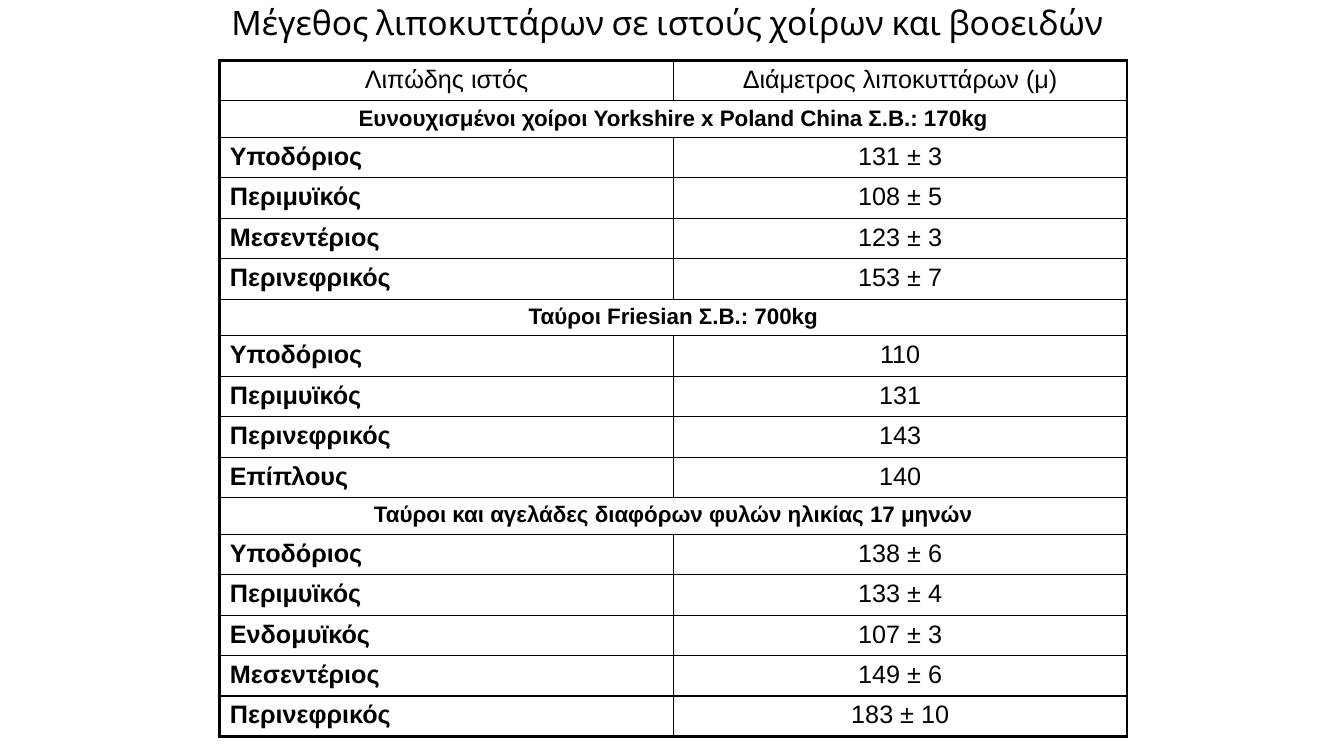
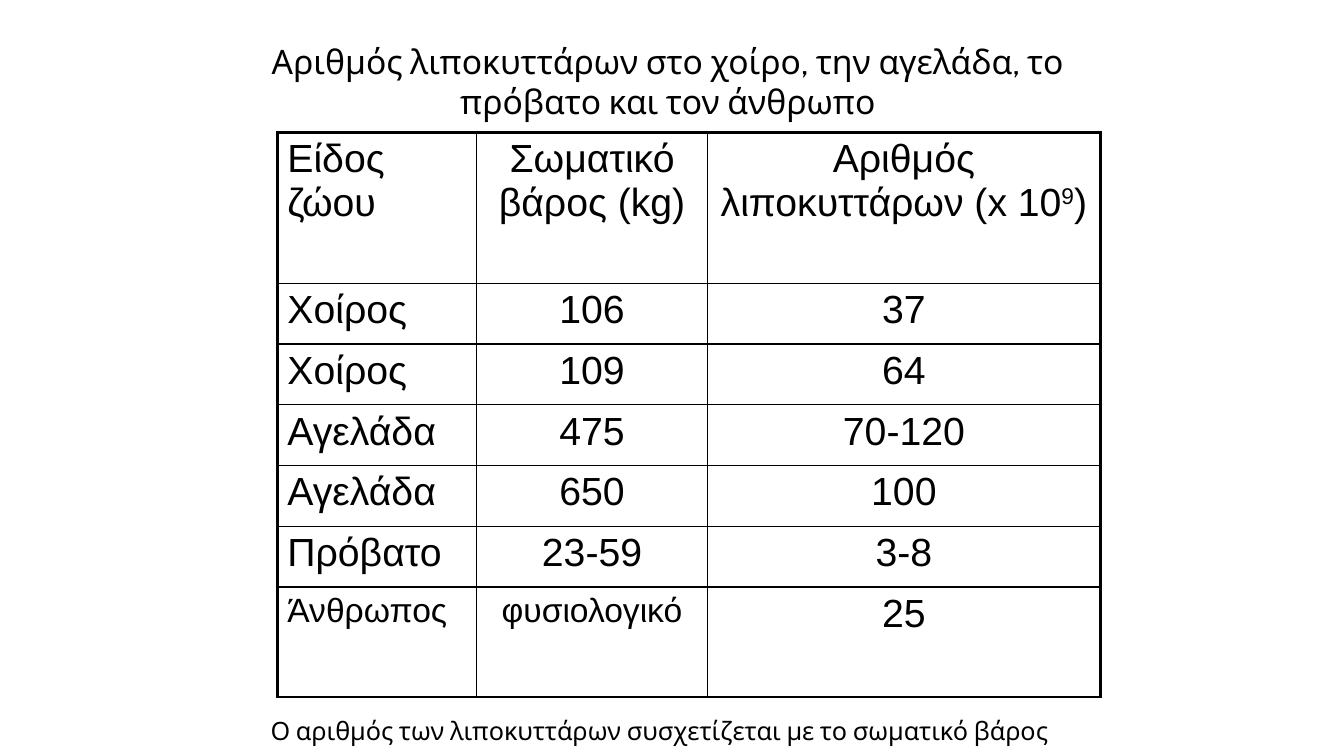
from lxml.etree import SubElement
from pptx import Presentation
from pptx.dml.color import RGBColor
from pptx.enum.text import PP_ALIGN as Align
from pptx.oxml.ns import qn
from pptx.util import Cm, Pt

BLACK = RGBColor(0x00, 0x00, 0x00)
TITLE_FONT, TABLE_FONT = "Cabin", "Arial"
THIN, THICK = Pt(1), Pt(2.25)


def write(tf, text, font=TABLE_FONT, size=18, bold=False, align=Align.CENTER):
    """Fill a text frame; a part between two carets is superscript."""
    tf.word_wrap = True
    p = tf.paragraphs[0]
    p.alignment = align
    for i, part in enumerate(text.split("^")):
        r = p.add_run()
        r.text = part
        r.font.name, r.font.size, r.font.bold = font, Pt(size), bold
        r.font.color.rgb = BLACK
        if i % 2:
            r._r.get_or_add_rPr().set("baseline", "30000")


def set_borders(cell, **widths):
    tc_pr = cell._tc.get_or_add_tcPr()
    for side in "LRTB":
        ln = SubElement(tc_pr, qn(f"a:ln{side}"), w=str(widths[side]))
        fill = SubElement(ln, qn("a:solidFill"))
        SubElement(fill, qn("a:srgbClr"), val=str(BLACK))


class Deck:
    def __init__(self):
        self.prs = Presentation()
        self.prs.slide_width, self.prs.slide_height = Cm(33.87), Cm(19.05)
        self.s = None

    def slide(self):
        self.s = self.prs.slides.add_slide(self.prs.slide_layouts[6])

    def label(self, text, x, y, w, h, size=24):
        sp = self.s.shapes.add_textbox(Cm(x), Cm(y), Cm(w), Cm(h))
        write(sp.text_frame, text, font=TITLE_FONT, size=size)

    def table(self, rows, x, y, widths, heights, style):
        """Draw a framed grid; style(row, column) gives each cell's format.

        A row with a single text spans the whole width.
        """
        n_rows, n_cols = len(rows), len(widths)
        tbl = self.s.shapes.add_table(n_rows, n_cols, Cm(x), Cm(y),
                                      Cm(sum(widths)), Cm(sum(heights))).table
        tbl.first_row = tbl.horz_banding = False
        for col, w in zip(tbl.columns, widths):
            col.width = Cm(w)
        for row, h in zip(tbl.rows, heights):
            row.height = Cm(h)
        for i, texts in enumerate(rows):
            if len(texts) == 1:
                tbl.cell(i, 0).merge(tbl.cell(i, n_cols - 1))
            for j in range(n_cols):
                cell = tbl.cell(i, j)
                set_borders(cell,
                            L=THICK if j == 0 else THIN,
                            R=THICK if j == n_cols - 1 else THIN,
                            T=THICK if i == 0 else THIN,
                            B=THICK if i == n_rows - 1 else THIN)
                cell.fill.background()
                if j < len(texts):
                    write(cell.text_frame, texts[j], **style(i, j))


CELL_SIZES = [
    ("Λιπώδης ιστός", "Διάμετρος λιποκυττάρων (μ)"),
    ("Ευνουχισμένοι χοίροι Yorkshire x Poland China Σ.Β.: 170kg",),
    ("Υποδόριος", "131 ± 3"),
    ("Περιμυϊκός", "108 ± 5"),
    ("Μεσεντέριος", "123 ± 3"),
    ("Περινεφρικός", "153 ± 7"),
    ("Ταύροι Friesian Σ.Β.: 700kg",),
    ("Υποδόριος", "110"),
    ("Περιμυϊκός", "131"),
    ("Περινεφρικός", "143"),
    ("Επίπλους", "140"),
    ("Ταύροι και αγελάδες διαφόρων φυλών ηλικίας 17 μηνών",),
    ("Υποδόριος", "138 ± 6"),
    ("Περιμυϊκός", "133 ± 4"),
    ("Ενδομυϊκός", "107 ± 3"),
    ("Μεσεντέριος", "149 ± 6"),
    ("Περινεφρικός", "183 ± 10"),
]

CELL_COUNTS = [
    ("Είδος ζώου", "Σωματικό βάρος (kg)", "Αριθμός λιποκυττάρων (x 10^9^)"),
    ("Χοίρος", "106", "37"),
    ("Χοίρος", "109", "64"),
    ("Αγελάδα", "475", "70-120"),
    ("Αγελάδα", "650", "100"),
    ("Πρόβατο", "23-59", "3-8"),
    ("Άνθρωπος", "φυσιολογικό", "25"),
]


def size_style(i, j):
    if len(CELL_SIZES[i]) == 1:
        return dict(size=16, bold=True)
    if i and j == 0:
        return dict(bold=True, align=Align.LEFT)
    return {}


def count_style(i, j):
    last_words = i == len(CELL_COUNTS) - 1 and j < 2
    return dict(size=24 if last_words else 28,
                align=Align.CENTER if j else Align.LEFT)


def main():
    deck = Deck()

    # Fat cell size by tissue
    deck.slide()
    deck.table(CELL_SIZES, 5.54, 1.52, [11.43] * 2,
               [0.92 if len(row) == 1 else 1.02 for row in CELL_SIZES],
               size_style)
    deck.label("Μέγεθος λιποκυττάρων σε ιστούς χοίρων και βοοειδών",
               4.72, -0.08, 24.2, 1.27)

    # Fat cell number by species
    deck.slide()
    deck.table(CELL_COUNTS, 6.99, 3.33, [5.02, 5.82, 9.9],
               [3.81] + [1.53] * 5 + [2.77], count_style)
    deck.label("Αριθμός λιποκυττάρων στο χοίρο, την αγελάδα, το πρόβατο "
               "και τον άνθρωπο", 4.93, 0.91, 23.8, 2.31)
    deck.label("Ο αριθμός των λιποκυττάρων συσχετίζεται με το σωματικό βάρος",
               6.53, 17.91, 20.19, 1.02, size=18)

    deck.prs.save("out.pptx")


if __name__ == "__main__":
    main()
